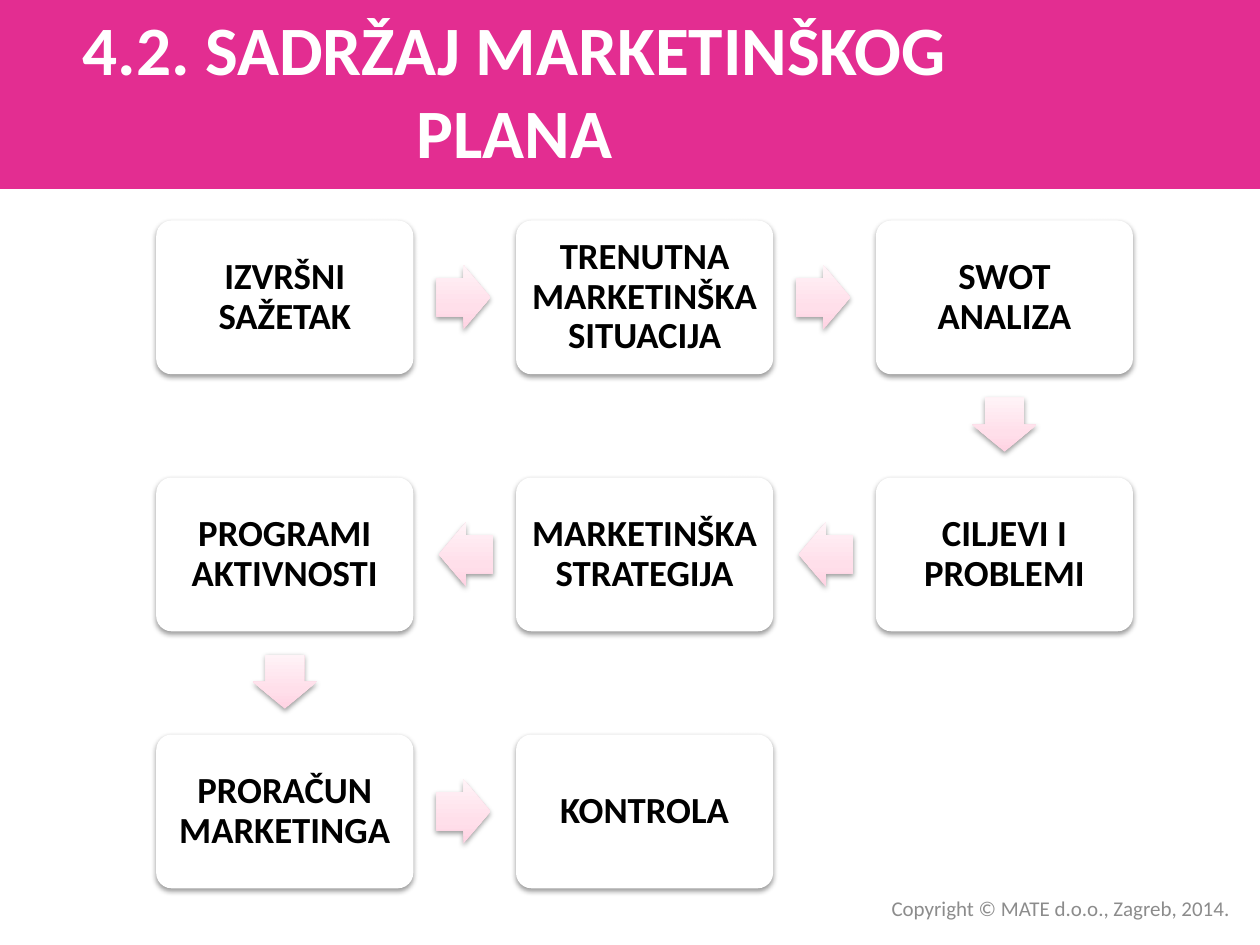
from dataclasses import dataclass

import pptx
import pptx.dml.color
import pptx.enum.shapes
import pptx.enum.text
import pptx.oxml
import pptx.oxml.ns
import pptx.util

Inches = pptx.util.Inches
Shapes = pptx.enum.shapes.MSO_SHAPE
Align = pptx.enum.text.PP_ALIGN

BOX_WIDTH, BOX_HEIGHT = 2.04, 1.22
GRID_LEFT, GRID_TOP = 1.24, 1.75
COLUMN_PITCH, ROW_PITCH = 1.4 * BOX_WIDTH, 2.04
ARROW_LENGTH, ARROW_WIDTH = 0.43, 0.51
ARROW_SETBACK = 0.01
ARROW_STOPS = ((0, "FFD3E3"), (35, "FFDFEA"), (100, "FFF3F7"))
ROTATIONS = {(1, 0): 0, (0, 1): 90, (-1, 0): 180}


@dataclass(frozen=True)
class Step:
    label: str
    column: int
    row: int

    def center(self) -> tuple[float, float]:
        return (
            GRID_LEFT + self.column * COLUMN_PITCH + BOX_WIDTH / 2,
            GRID_TOP + self.row * ROW_PITCH + BOX_HEIGHT / 2,
        )


STEPS = (
    Step("IZVRŠNI SAŽETAK", 0, 0),
    Step("TRENUTNA MARKETINŠKA SITUACIJA", 1, 0),
    Step("SWOT ANALIZA", 2, 0),
    Step("CILJEVI I PROBLEMI", 2, 1),
    Step("MARKETINŠKA STRATEGIJA", 1, 1),
    Step("PROGRAMI AKTIVNOSTI", 0, 1),
    Step("PRORAČUN MARKETINGA", 0, 2),
    Step("KONTROLA", 1, 2),
)


def rgb(value: str) -> pptx.dml.color.RGBColor:
    return pptx.dml.color.RGBColor.from_string(value)


def apply(target, values: dict) -> None:
    for name, value in values.items():
        setattr(target, name, value)


def write(shape, text: str, size: float, color: str, bold: bool,
          alignment, inset: float = 0.1, spacing: float = 1.0) -> None:
    frame = shape.text_frame
    apply(frame, {
        "word_wrap": True,
        "vertical_anchor": pptx.enum.text.MSO_ANCHOR.MIDDLE,
        "margin_left": Inches(inset),
        "margin_right": Inches(inset),
        "margin_top": Inches(inset),
        "margin_bottom": Inches(inset),
    })
    paragraph = frame.paragraphs[0]
    apply(paragraph, {"alignment": alignment, "line_spacing": spacing})
    run = paragraph.add_run()
    run.text = text
    apply(run.font, {"name": "Calibri", "size": pptx.util.Pt(size), "bold": bold})
    run.font.color.rgb = rgb(color)


def add_centered(slide, preset, center: tuple[float, float], width: float, height: float):
    x, y = center
    shape = slide.shapes.add_shape(
        preset, Inches(x - width / 2), Inches(y - height / 2), Inches(width), Inches(height))
    shape.line.fill.background()
    shape.shadow.inherit = False
    return shape


def cast_shadow(shape) -> None:
    effects = shape._element.spPr.find(pptx.oxml.ns.qn("a:effectLst"))
    effects.append(pptx.oxml.parse_xml(
        f'<a:outerShdw {pptx.oxml.ns.nsdecls("a")} blurRad="{pptx.util.Pt(3.1)}" '
        f'dist="{pptx.util.Pt(1.6)}" dir="5400000" rotWithShape="0">'
        '<a:srgbClr val="000000"><a:alpha val="38000"/></a:srgbClr></a:outerShdw>'))


def shade(shape) -> None:
    stops = "".join(
        f'<a:gs pos="{position * 1000}"><a:srgbClr val="{color}"/></a:gs>'
        for position, color in ARROW_STOPS)
    gradient = pptx.oxml.parse_xml(
        f'<a:gradFill {pptx.oxml.ns.nsdecls("a")} rotWithShape="0">'
        f'<a:gsLst>{stops}</a:gsLst><a:lin ang="16200000" scaled="0"/></a:gradFill>')
    shape._element.spPr.find(pptx.oxml.ns.qn("a:prstGeom")).addnext(gradient)


def draw_step(slide, step: Step) -> None:
    box = add_centered(slide, Shapes.ROUNDED_RECTANGLE, step.center(), BOX_WIDTH, BOX_HEIGHT)
    box.adjustments[0] = 0.1
    box.fill.solid()
    box.fill.fore_color.rgb = rgb("FFFFFF")
    cast_shadow(box)
    write(box, step.label, 21, "000000", True, Align.CENTER, inset=0.09, spacing=0.9)


def draw_arrow(slide, start: Step, end: Step) -> None:
    direction = (end.column - start.column, end.row - start.row)
    middle = tuple(
        (a + b) / 2 - ARROW_SETBACK * d
        for a, b, d in zip(start.center(), end.center(), direction))
    arrow = add_centered(slide, Shapes.RIGHT_ARROW, middle, ARROW_LENGTH, ARROW_WIDTH)
    arrow.adjustments[0] = 0.6
    arrow.adjustments[1] = 0.5
    arrow.rotation = ROTATIONS[direction]
    shade(arrow)
    cast_shadow(arrow)


def main() -> None:
    presentation = pptx.Presentation()
    apply(presentation, {"slide_width": Inches(10), "slide_height": Inches(7.5)})
    slide = presentation.slides.add_slide(presentation.slide_layouts[6])

    banner = add_centered(slide, Shapes.RECTANGLE, (5, 0.75), 10, 1.5)
    banner.fill.solid()
    banner.fill.fore_color.rgb = rgb("E32D91")

    for step in STEPS:
        draw_step(slide, step)
    for start, end in zip(STEPS, STEPS[1:]):
        draw_arrow(slide, start, end)

    title = slide.shapes.add_textbox(Inches(0), Inches(0.08), Inches(8.17), Inches(1.25))
    write(title, "4.2. SADRŽAJ MARKETINŠKOG PLANA", 39.6, "FFFFFF", True, Align.CENTER)
    copyright_line = slide.shapes.add_textbox(
        Inches(4.69), Inches(7.06), Inches(5.17), Inches(0.3))
    write(copyright_line, "Copyright © MATE d.o.o., Zagreb, 2014.", 12, "8C8C8C", False,
          Align.RIGHT, inset=0.1)

    presentation.save("out.pptx")


if __name__ == "__main__":
    main()
